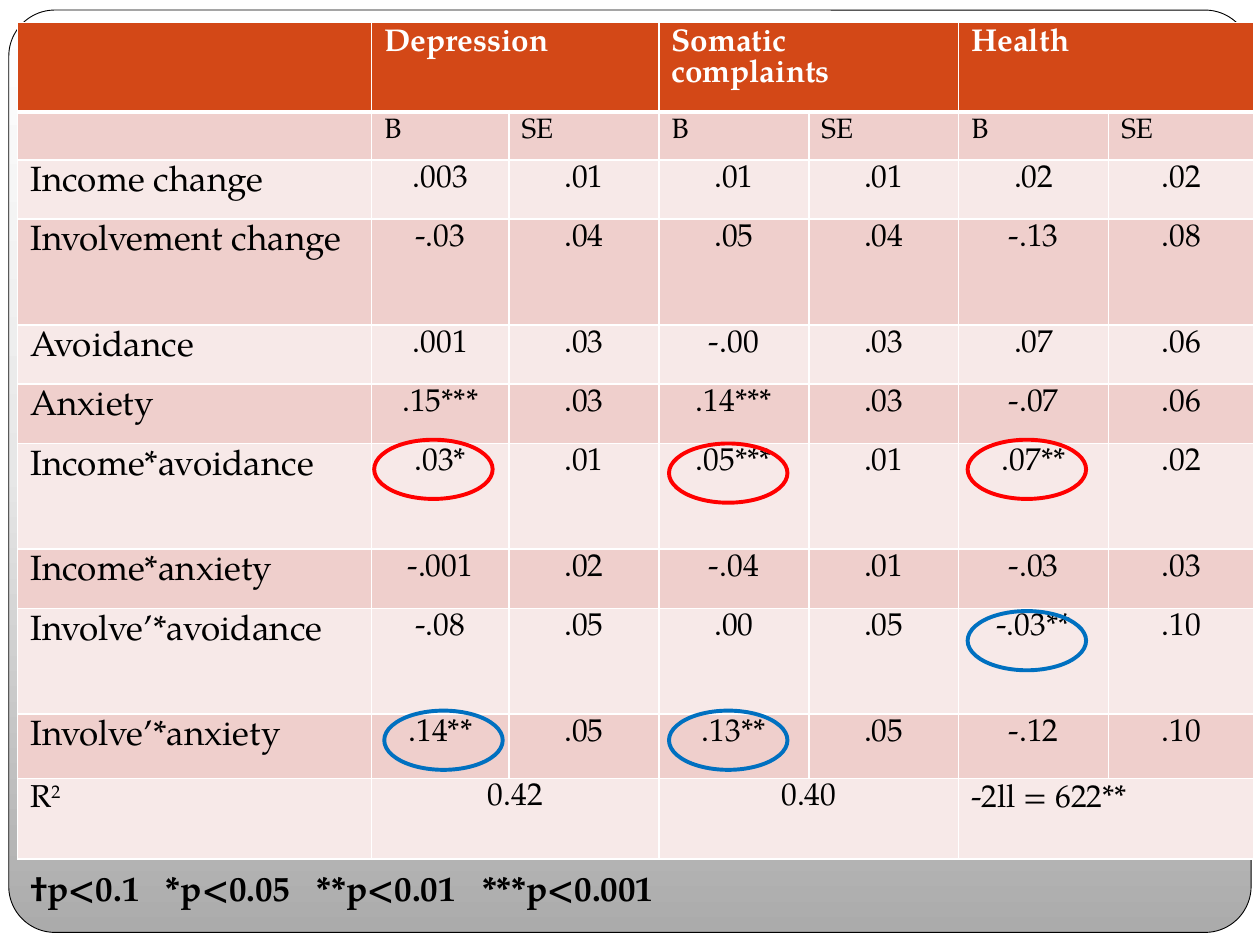
from copy import deepcopy

from lxml.etree import SubElement
from pptx import Presentation
from pptx.dml.color import RGBColor
from pptx.enum.shapes import MSO_SHAPE
from pptx.enum.text import PP_ALIGN
from pptx.oxml.ns import qn
from pptx.util import Inches, Pt

FONT = "TeX Gyre Pagella"
COLORS = {
    "white": "FFFFFF", "black": "000000", "header": "D34817",
    "band_dark": "EFCFCC", "band_light": "F7E9E8",
    "red": "FF0000", "blue": "0070C0",
    "grey": "ABABAB", "pale": "E7E7E7",
}
COL_WIDTHS = [2.81, 1.09, 1.19, 1.19, 1.19, 1.19, 1.15]
ROW_HEIGHTS = [0.71, 0.38, 0.47, 0.84, 0.47, 0.47, 0.84, 0.47, 0.84, 0.51, 0.64]
HEADINGS = ["", "Depression", "", "Somatic complaints", "", "Health", ""]
SUBHEADINGS = [""] + ["B", "SE"] * 3
RESULTS = [
    ["Income change", ".003", ".01", ".01", ".01", ".02", ".02"],
    ["Involvement change", "-.03", ".04", ".05", ".04", "-.13", ".08"],
    ["Avoidance", ".001", ".03", "-.00", ".03", ".07", ".06"],
    ["Anxiety", ".15***", ".03", ".14***", ".03", "-.07", ".06"],
    ["Income*avoidance", ".03*", ".01", ".05***", ".01", ".07**", ".02"],
    ["Income*anxiety", "-.001", ".02", "-.04", ".01", "-.03", ".03"],
    ["Involve’*avoidance", "-.08", ".05", ".00", ".05", "-.03**", ".10"],
    ["Involve’*anxiety", ".14**", ".05", ".13**", ".05", "-.12", ".10"],
]
FIT = ["R", "0.42", "", "0.40", "", "-2ll = 622**", ""]
MARKS = [
    (2.97, 3.49, "red"), (5.31, 3.52, "red"), (7.68, 3.49, "red"),
    (3.05, 5.64, "blue"), (5.31, 5.64, "blue"), (7.68, 4.85, "blue"),
]


def rgb(name):
    """Return the named colour."""
    return RGBColor.from_string(COLORS[name])


def style_font(p, size, color="black", bold=False):
    """Set the font of a paragraph."""
    p.font.name = FONT
    p.font.size = Pt(size)
    p.font.bold = bold
    p.font.color.rgb = rgb(color)


def set_borders(cell, bottom=1):
    """Draw white borders round a cell."""
    tc_pr = cell._tc.get_or_add_tcPr()
    for side, width in (("L", 1), ("R", 1), ("T", 1), ("B", bottom)):
        ln = SubElement(tc_pr, qn(f"a:ln{side}"), w=str(Pt(width)))
        fill = SubElement(ln, qn("a:solidFill"))
        SubElement(fill, qn("a:srgbClr"), val=COLORS["white"])


def fill_cell(cell, text, size, fill, color="black", bold=False, centered=False, bottom=1):
    """Write and style one table cell."""
    set_borders(cell, bottom)
    cell.fill.solid()
    cell.fill.fore_color.rgb = rgb(fill)
    p = cell.text_frame.paragraphs[0]
    if text:
        p.add_run().text = text
    style_font(p, size, color, bold)
    if centered:
        p.alignment = PP_ALIGN.CENTER
        p.line_spacing = 1.15
        cell.margin_left = cell.margin_right = Inches(0.07)
        cell.margin_top = cell.margin_bottom = 0


def add_panel(slide, x, y, w, h):
    """Draw the rounded gradient panel behind the table."""
    sp = slide.shapes.add_shape(MSO_SHAPE.ROUNDED_RECTANGLE, Inches(x), Inches(y), Inches(w), Inches(h))
    sp.adjustments[0] = 0.05
    sp.shadow.inherit = False
    sp.line.color.rgb = rgb("black")
    sp.line.width = Pt(0.5)
    sp.fill.gradient()
    sp.fill.gradient_angle = 90
    stops = sp._element.spPr.find(f".//{qn('a:gsLst')}")
    stops.insert(1, deepcopy(stops[0]))
    for stop, position, name in zip(sp.fill.gradient_stops, (0, 0.5, 1), ("grey", "pale", "white")):
        stop.position = position
        stop.color.rgb = rgb(name)


def add_results_table(slide, x, y, w, h):
    """Build the regression table."""
    rows = [HEADINGS, SUBHEADINGS, *RESULTS, FIT]
    table = slide.shapes.add_table(len(rows), len(COL_WIDTHS), Inches(x), Inches(y), Inches(w), Inches(h)).table
    table.horz_banding = False
    for col, width in zip(table.columns, COL_WIDTHS):
        col.width = Inches(width)
    for row, height in zip(table.rows, ROW_HEIGHTS):
        row.height = Inches(height)
    last = len(rows) - 1
    for i, values in enumerate(rows):
        band = "band_dark" if i % 2 else "band_light"
        for j, text in enumerate(values):
            cell = table.cell(i, j)
            if i == 0:
                fill_cell(cell, text, 18, "header", "white", bold=True, bottom=3)
            elif i == 1:
                fill_cell(cell, text, 16, band)
            elif i == last:
                fill_cell(cell, text, 18, band, centered=0 < j < 5)
            else:
                fill_cell(cell, text, 18 if j else 20, band, centered=j > 0)
    for i in (0, last):
        for j in (1, 3, 5):
            table.cell(i, j).merge(table.cell(i, j + 1))
    r = table.cell(last, 0).text_frame.paragraphs[0].add_run()
    r.text = "2"
    r._r.get_or_add_rPr().set("baseline", "30000")


def add_mark(slide, x, y, w, h, color):
    """Ring a significant value."""
    sp = slide.shapes.add_shape(MSO_SHAPE.OVAL, Inches(x), Inches(y), Inches(w), Inches(h))
    sp.shadow.inherit = False
    sp.fill.background()
    sp.line.color.rgb = rgb(color)
    sp.line.width = Pt(2.25)


def add_legend(slide, x, y, w, h):
    """Write the significance levels."""
    tf = slide.shapes.add_textbox(Inches(x), Inches(y), Inches(w), Inches(h)).text_frame
    tf.word_wrap = True
    p = tf.paragraphs[0]
    p.add_run().text = "†p<0.1   *p<0.05   **p<0.01   ***p<0.001"
    style_font(p, 20, bold=True)


def main():
    """Build the slide and save it."""
    prs = Presentation()
    prs.slide_width, prs.slide_height = Inches(10), Inches(7.5)
    slide = prs.slides.add_slide(prs.slide_layouts[6])
    slide.background.fill.solid()
    slide.background.fill.fore_color.rgb = rgb("white")
    add_panel(slide, 0.07, 0.08, 9.86, 7.32)
    add_results_table(slide, 0.14, 0.18, sum(COL_WIDTHS), sum(ROW_HEIGHTS))
    for x, y, color in MARKS:
        add_mark(slide, x, y, 0.94, 0.47, color)
    add_legend(slide, 0.14, 6.83, 6.02, 0.74)
    prs.save("out.pptx")


if __name__ == "__main__":
    main()
